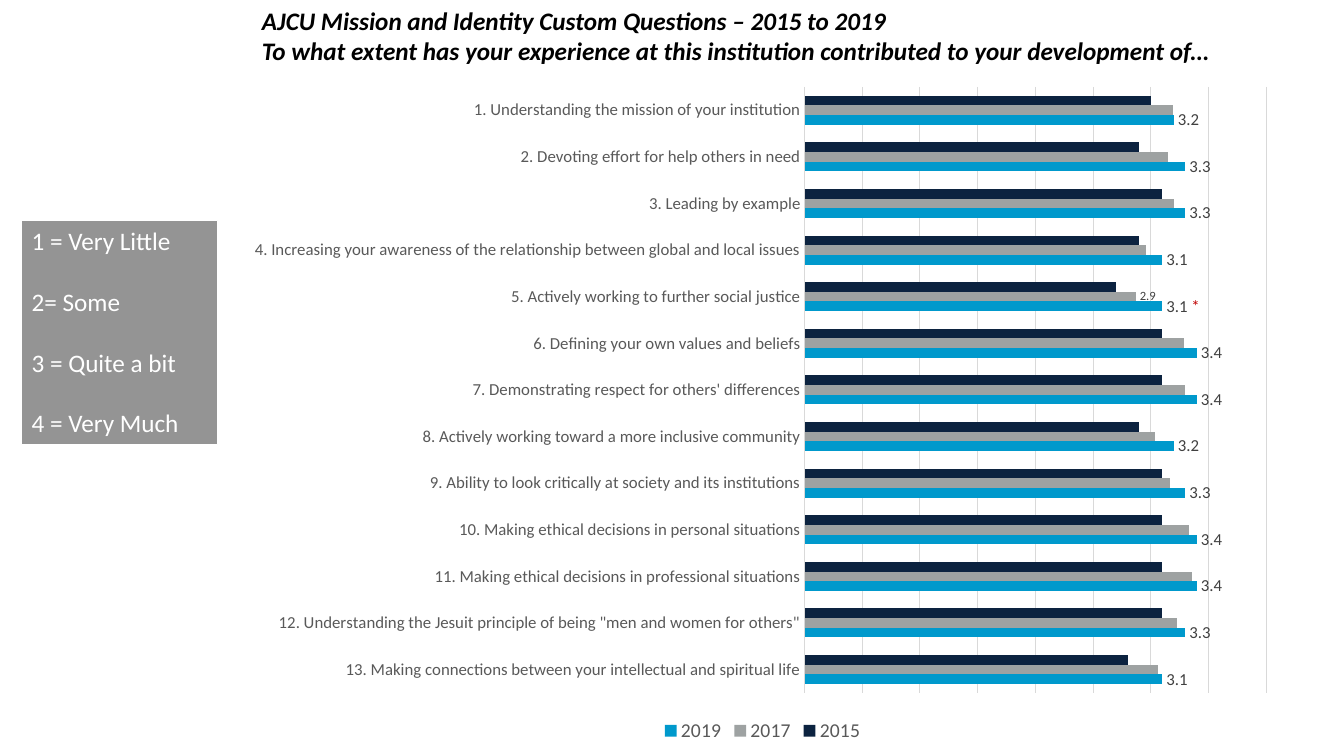
from lxml import etree
from pptx import Presentation
from pptx.chart.data import CategoryChartData
from pptx.dml.color import RGBColor
from pptx.enum.chart import XL_CHART_TYPE, XL_LABEL_POSITION, XL_LEGEND_POSITION, XL_TICK_MARK
from pptx.enum.shapes import MSO_SHAPE
from pptx.enum.text import MSO_ANCHOR, PP_ALIGN
from pptx.oxml import parse_xml
from pptx.oxml.ns import nsdecls, qn
from pptx.util import Pt

BAR = XL_CHART_TYPE.BAR_CLUSTERED
OUTSIDE_END = XL_LABEL_POSITION.OUTSIDE_END
BOTTOM = XL_LEGEND_POSITION.BOTTOM
NO_TICK = XL_TICK_MARK.NONE
RECT = MSO_SHAPE.RECTANGLE

FONT = "Calibri"
COLORS = {
    "black": "000000", "white": "FFFFFF", "text": "595959", "label": "404040",
    "grid": "D9D9D9", "star": "C00000",
    "2015": "0C2340", "2017": "9EA2A2", "2019": "0099CC",
}
TITLE = [
    "AJCU Mission and Identity Custom Questions – 2015 to 2019",
    "To what extent has your experience at this institution contributed to your development of…",
]
SCALE = ["1 = Very Little", "2= Some", "3 = Quite a bit", "4 = Very Much"]
QUESTIONS = [
    "Understanding the mission of your institution",
    "Devoting effort for help others in need",
    "Leading by example",
    "Increasing your awareness of the relationship between global and local issues",
    "Actively working to further social justice",
    "Defining your own values and beliefs",
    "Demonstrating respect for others' differences",
    "Actively working toward a more inclusive community",
    "Ability to look critically at society and its institutions",
    "Making ethical decisions in personal situations",
    "Making ethical decisions in professional situations",
    'Understanding the Jesuit principle of being "men and women for others"',
    "Making connections between your intellectual and spiritual life",
]
MEANS = {
    "2015": [3, 2.9, 3.1, 2.9, 2.7, 3.1, 3.1, 2.9, 3.1, 3.1, 3.1, 3.1, 2.8],
    "2017": [3.19, 3.15, 3.2, 2.96, 2.87, 3.29, 3.3, 3.04, 3.17, 3.33, 3.36, 3.23, 3.06],
    "2019": [3.2, 3.3, 3.3, 3.1, 3.1, 3.4, 3.4, 3.2, 3.3, 3.4, 3.4, 3.3, 3.1],
}
SOCIAL_JUSTICE = 4


def rgb(name):
    return RGBColor.from_string(COLORS[name])


def style_font(font, size, color, bold=False, italic=False):
    font.name, font.size = FONT, Pt(size)
    font.bold, font.italic = bold, italic
    font.color.rgb = rgb(color)


def style_line(line, color):
    line.color.rgb = rgb(color)
    line.width = Pt(0.75)


def add_lines(tf, lines, gap=0, **style):
    """Write one left-aligned paragraph per line, with a gap between them."""
    tf.word_wrap = True
    for i, line in enumerate(lines):
        p = tf.paragraphs[0] if i == 0 else tf.add_paragraph()
        p.alignment = PP_ALIGN.LEFT
        if i and gap:
            p.space_before = Pt(gap)
        r = p.add_run()
        r.text = line
        style_font(r.font, 18, **style)


def add_title(slide, x, y, w, h):
    sp = slide.shapes.add_textbox(Pt(x), Pt(y), Pt(w), Pt(h))
    add_lines(sp.text_frame, TITLE, color="black", bold=True, italic=True)


def add_scale_key(slide, x, y, w, h):
    sp = slide.shapes.add_shape(RECT, Pt(x), Pt(y), Pt(w), Pt(h))
    sp.shadow.inherit = False
    sp.fill.solid()
    sp.fill.fore_color.rgb = rgb("black")
    color = sp.fill._xPr.find(".//" + qn("a:srgbClr"))
    etree.SubElement(color, qn("a:alpha"), val="42000")
    style_line(sp.line, "white")
    sp.text_frame.vertical_anchor = MSO_ANCHOR.TOP
    add_lines(sp.text_frame, SCALE, gap=21.8, color="white")


def set_plot_area(chart, x, y, w, h):
    """Fix the inner plot area, as fractions of the chart."""
    area = chart._chartSpace.chart.plotArea
    for old in area.findall(qn("c:layout")):
        area.remove(old)
    sizes = "".join(f'<c:{k} val="{v}"/>' for k, v in zip("xywh", (x, y, w, h)))
    area.insert(0, parse_xml(
        f'<c:layout {nsdecls("c")}><c:manualLayout><c:layoutTarget val="inner"/>'
        f'<c:xMode val="edge"/><c:yMode val="edge"/>{sizes}</c:manualLayout></c:layout>'))


def style_axes(chart):
    cat, val = chart.category_axis, chart.value_axis
    cat.reverse_order = True
    cat.major_tick_mark = cat.minor_tick_mark = NO_TICK
    style_font(cat.tick_labels.font, 12, "text")
    style_line(cat.format.line, "grid")
    val.minimum_scale, val.maximum_scale, val.major_unit = 0, 4, 0.5
    val.has_major_gridlines = True
    style_line(val.major_gridlines.format.line, "grid")
    val.visible = False


def label_series(middle, latest):
    """Label every latest bar, and mark the significant change."""
    labels = latest.data_labels
    labels.show_value = True
    labels.number_format, labels.number_format_is_linked = "0.0", False
    labels.position = OUTSIDE_END
    style_font(labels.font, 12, "label")

    marked = latest.points[SOCIAL_JUSTICE].data_label
    p = marked.text_frame.paragraphs[0]
    for text, color in (("3.1 ", "label"), ("*", "star")):
        r = p.add_run()
        r.text = text
        style_font(r.font, 12, color)
    marked.position = OUTSIDE_END

    earlier = middle.points[SOCIAL_JUSTICE].data_label
    style_font(earlier.font, 9, "label")
    earlier.position = OUTSIDE_END
    middle.data_labels.show_value = False


def add_means_chart(slide, x, y, w, h):
    data = CategoryChartData(number_format="0.0")
    data.categories = [f"{i}. {q}" for i, q in enumerate(QUESTIONS, 1)]
    for year, means in MEANS.items():
        data.add_series(year, means)
    chart = slide.shapes.add_chart(BAR, Pt(x), Pt(y), Pt(w), Pt(h), data).chart
    chart.has_title = False
    style_font(chart.font, 10, "black")
    style_axes(chart)
    set_plot_area(chart, 0.54, 0.02, 0.44, 0.9)

    plot = chart.plots[0]
    plot.gap_width, plot.overlap = 182, 0
    plot.vary_by_categories = False
    for series in plot.series:
        series.format.fill.solid()
        series.format.fill.fore_color.rgb = rgb(series.name)
    label_series(plot.series[1], plot.series[2])

    chart.has_legend = True
    chart.legend.position = BOTTOM
    chart.legend.include_in_layout = False
    style_font(chart.legend.font, 14, "text")


def main():
    prs = Presentation()
    prs.slide_width, prs.slide_height = Pt(960), Pt(540)
    slide = prs.slides.add_slide(prs.slide_layouts[6])
    add_means_chart(slide, 170, 52.5, 749.5, 481)
    add_title(slide, 180, 0, 739.5, 72.5)
    add_scale_key(slide, 15.5, 157.5, 140, 160)
    prs.save("out.pptx")


if __name__ == "__main__":
    main()
